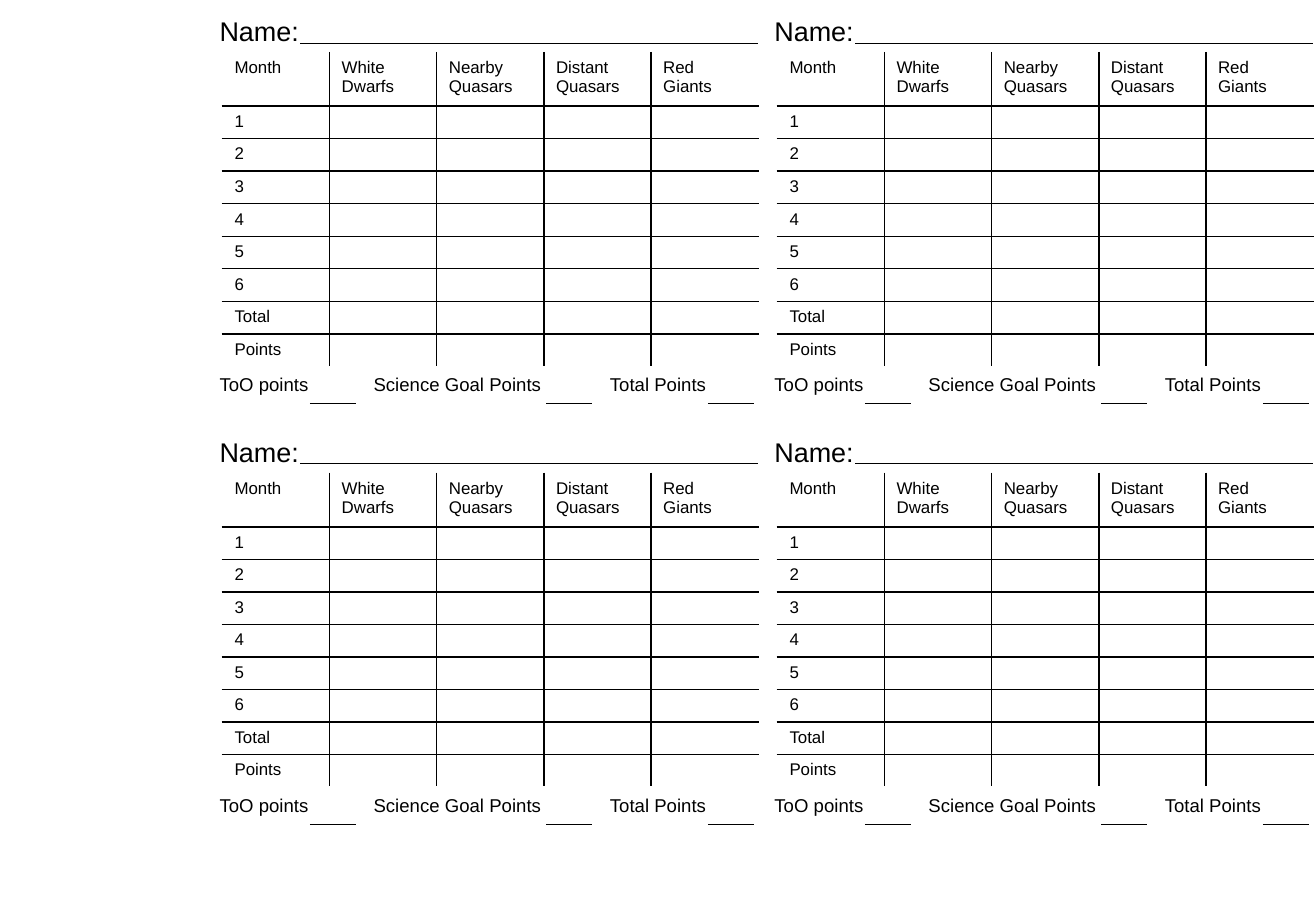
from itertools import product

from lxml import etree
from pptx import Presentation
from pptx.dml.color import RGBColor
from pptx.enum import shapes, text
from pptx.oxml import ns
from pptx.util import Cm, Pt

BLACK, WHITE = "000000", "FFFFFF"
FONT = "Arial"

HEADERS = ["Month", "White Dwarfs", "Nearby Quasars", "Distant Quasars", "Red Giants"]
ROW_LABELS = ["1", "2", "3", "4", "5", "6", "Total", "Points"]
# label, label left, label width, left of the blank to fill in
SCORES = [
    ("ToO points", 4.34, 3.1, 6.48),
    ("Science Goal Points", 7.56, 4.9, 11.42),
    ("Total Points", 12.5, 3.3, 14.8),
]

# Lengths in cm, for the top left card
CARD_STEP_X, CARD_STEP_Y = 11.6, 8.8
TABLE_LEFT, TABLE_TOP = 4.65, 1.1
COL_WIDTH, HEADER_HEIGHT, ROW_HEIGHT = 2.24, 1.12, 0.68
BLANK_WIDTH = 0.96

prs = Presentation()
prs.slide_width, prs.slide_height = Cm(27.51), Cm(19.05)
s = prs.slides.add_slide(prs.slide_layouts[6])


def color(value):
    return RGBColor.from_string(value)


def format_run(r, size):
    r.font.name, r.font.size = FONT, Pt(size)
    r.font.color.rgb = color(BLACK)


def add_label(label, x, y, width, height, size):
    tf = s.shapes.add_textbox(Cm(x), Cm(y), Cm(width), Cm(height)).text_frame
    tf.word_wrap = True
    tf.auto_size = text.MSO_AUTO_SIZE.SHAPE_TO_FIT_TEXT
    tf.text = label
    format_run(tf.paragraphs[0].runs[0], size)


def add_rule(x, y, width):
    """Draw a thin horizontal line to write on."""
    line = s.shapes.add_connector(
        shapes.MSO_CONNECTOR.STRAIGHT, Cm(x), Cm(y), Cm(x + width), Cm(y))
    line.line.color.rgb = color(BLACK)
    line.line.width = Pt(0.5)
    etree.SubElement(line._element.spPr, ns.qn("a:effectLst"))


def set_borders(cell, colors):
    """Set 1 pt borders; colors run left, right, top, bottom."""
    tcPr = cell._tc.get_or_add_tcPr()
    for i, (side, value) in enumerate(zip("LRTB", colors)):
        ln = etree.Element(ns.qn(f"a:ln{side}"), w=str(Pt(1)))
        fill = etree.SubElement(ln, ns.qn("a:solidFill"))
        etree.SubElement(fill, ns.qn("a:srgbClr"), val=value)
        tcPr.insert(i, ln)


def add_score_table(x, y):
    rows, cols = len(ROW_LABELS) + 1, len(HEADERS)
    height = HEADER_HEIGHT + ROW_HEIGHT * len(ROW_LABELS)
    table = s.shapes.add_table(
        rows, cols, Cm(x), Cm(y), Cm(COL_WIDTH * cols), Cm(height)).table
    table.first_row = table.horz_banding = False
    for col in table.columns:
        col.width = Cm(COL_WIDTH)
    for i, row in enumerate(table.rows):
        row.height = Cm(ROW_HEIGHT if i else HEADER_HEIGHT)

    for i, j in product(range(rows), range(cols)):
        cell = table.cell(i, j)
        cell.fill.background()
        at_edge = (j == 0, j == cols - 1, i == 0, i == rows - 1)
        set_borders(cell, [WHITE if edge else BLACK for edge in at_edge])
        p = cell.text_frame.paragraphs[0]
        if i == 0 or j == 0:
            p.text = ROW_LABELS[i - 1] if i else HEADERS[j]
            format_run(p.runs[0], 10)
        else:
            # An empty cell takes its line height from the end mark
            etree.SubElement(p._p, ns.qn("a:endParaRPr"), sz="1000")


def add_card(dx, dy):
    add_label("Name:", 4.34 + dx, 0.18 + dy, 2.41, 0.94, 16)
    add_rule(6.28 + dx, 0.9 + dy, 9.57)
    add_score_table(TABLE_LEFT + dx, TABLE_TOP + dy)
    for label, x, width, blank_x in SCORES:
        add_label(label, x + dx, 7.67 + dy, width, 0.74, 11)
        add_rule(blank_x + dx, 8.43 + dy, BLANK_WIDTH)


for row, col in product(range(2), range(2)):
    add_card(col * CARD_STEP_X, row * CARD_STEP_Y)

prs.save("out.pptx")
